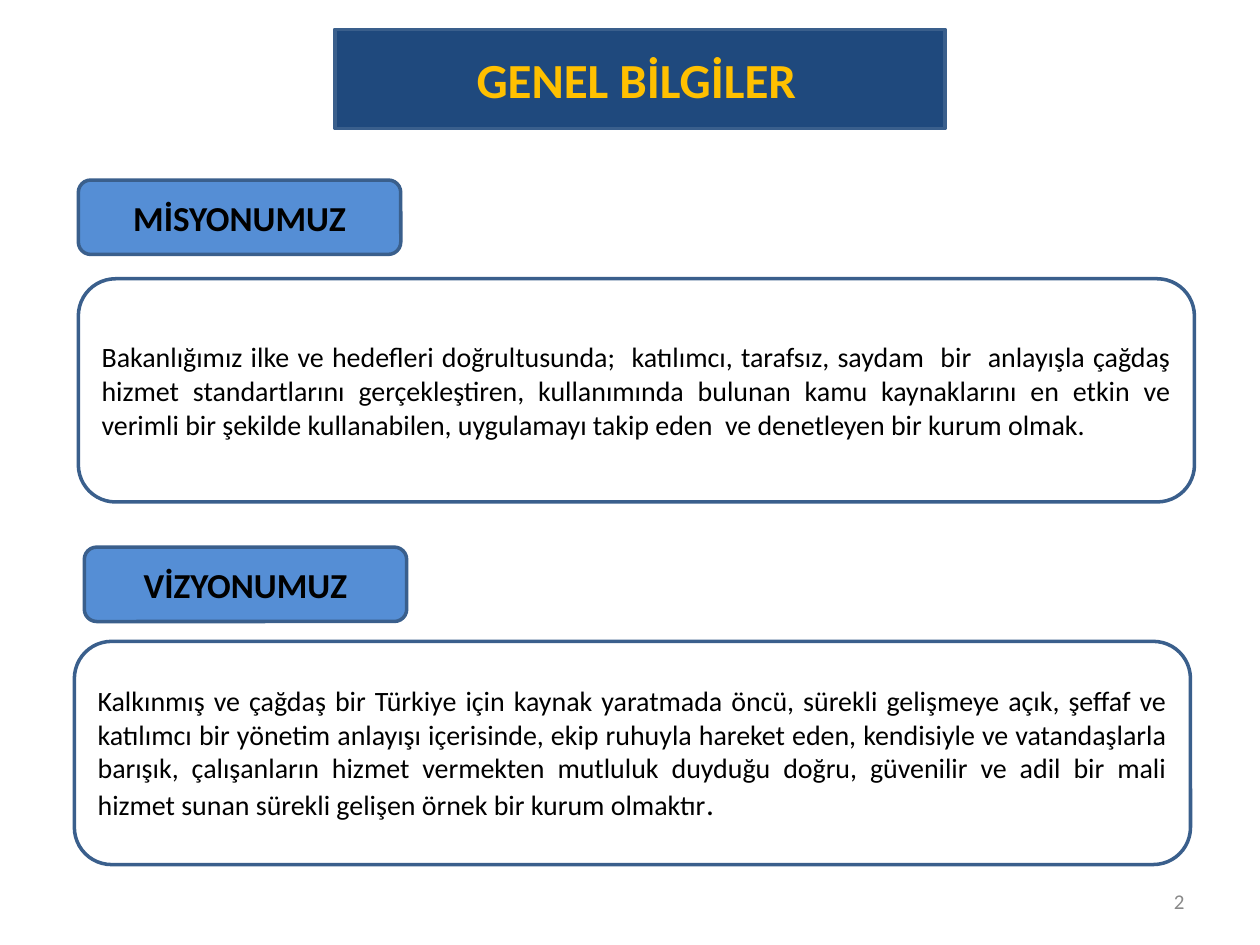
from lxml import etree
from pptx import Presentation
from pptx.dml.color import RGBColor
from pptx.enum.shapes import MSO_SHAPE
from pptx.enum.text import MSO_ANCHOR, MSO_AUTO_SIZE, PP_ALIGN
from pptx.oxml.ns import qn
from pptx.util import Cm, Pt

ROUNDED = MSO_SHAPE.ROUNDED_RECTANGLE
MIDDLE = MSO_ANCHOR.MIDDLE
FIXED = MSO_AUTO_SIZE.NONE
CENTER, JUSTIFY, RIGHT = PP_ALIGN.CENTER, PP_ALIGN.JUSTIFY, PP_ALIGN.RIGHT
TITLE_ONLY = 5

FONT = "Calibri"
BORDER = "3A5F8C"
BLACK = "000000"
HEADING_HEIGHT = 1.5
STATEMENT_HEIGHT = 4.5

MISSION = [
    ("Bakanlığımız ilke ve hedefleri doğrultusunda;  katılımcı, tarafsız, "
     "saydam  bir  anlayışla çağdaş hizmet standartlarını gerçekleştiren, "
     "kullanımında bulunan kamu kaynaklarını en etkin ve verimli bir şekilde "
     "kullanabilen, uygulamayı takip eden  ve denetleyen bir kurum olmak.", 16),
]
VISION = [
    ("Kalkınmış ve çağdaş bir Türkiye için kaynak yaratmada öncü, sürekli "
     "gelişmeye açık, şeffaf ve katılımcı bir yönetim anlayışı içerisinde, "
     "ekip ruhuyla hareket eden, kendisiyle ve vatandaşlarla barışık, "
     "çalışanların hizmet vermekten mutluluk duyduğu doğru, güvenilir ve adil "
     "bir mali hizmet sunan sürekli gelişen örnek bir kurum olmaktır", 16),
    (".", 18),
]


def color(hex_value):
    return RGBColor.from_string(hex_value)


def write(shape, runs, align, text_color, bold=False):
    frame = shape.text_frame
    frame.word_wrap = True
    frame.auto_size = FIXED
    frame.vertical_anchor = MIDDLE
    paragraph = frame.paragraphs[0]
    paragraph.alignment = align
    for text, size in runs:
        run = paragraph.add_run()
        run.text = text
        run.font.name = FONT
        run.font.size = Pt(size)
        run.font.bold = bold
        run.font.color.rgb = color(text_color)


def paint(shape, fill=None):
    if fill:
        shape.fill.solid()
        shape.fill.fore_color.rgb = color(fill)
    else:
        shape.fill.background()
    shape.line.color.rgb = color(BORDER)
    shape.line.width = Pt(2)


def add_panel(slide, left, top, width, height, fill=None):
    panel = slide.shapes.add_shape(
        ROUNDED, Cm(left), Cm(top), Cm(width), Cm(height))
    panel.shadow.inherit = False
    paint(panel, fill)
    return panel


def place_title(slide, left, top, width, height):
    title = slide.shapes.title
    title.left, title.top = Cm(left), Cm(top)
    title.width, title.height = Cm(width), Cm(height)
    properties = title.element.spPr
    geometry = etree.SubElement(properties, qn("a:prstGeom"), prst="roundRect")
    etree.SubElement(geometry, qn("a:avLst"))
    paint(title, "1F497D")
    title.text_frame.margin_right = Cm(0.4)
    write(title, [("GENEL BİLGİLER", 28)], CENTER, "FFC000", bold=True)


def add_section(slide, left, top, width, heading, statement,
                heading_indent, statement_offset):
    label = add_panel(slide, left + heading_indent, top, 6.5, HEADING_HEIGHT,
                      "558ED5")
    write(label, [(heading, 20)], CENTER, BLACK, bold=True)
    body = add_panel(slide, left, top + statement_offset, width,
                     STATEMENT_HEIGHT)
    write(body, statement, JUSTIFY, BLACK)


def add_page_number(slide, left, top, width, height):
    number = slide.shapes.add_textbox(
        Cm(left), Cm(top), Cm(width), Cm(height))
    write(number, [("2", 12)], RIGHT, "898989")


def main():
    presentation = Presentation()
    presentation.slide_width, presentation.slide_height = Cm(25.4), Cm(19.05)
    slide = presentation.slides.add_slide(
        presentation.slide_layouts[TITLE_ONLY])
    place_title(slide, 6.75, 0.59, 12.3, 2)
    add_section(slide, 1.58, 3.63, 22.5, "MİSYONUMUZ", MISSION, 0, 1.99)
    add_section(slide, 1.5, 11.03, 22.5, "VİZYONUMUZ", VISION, 0.2, 1.9)
    add_page_number(slide, 18.2, 17.66, 5.93, 1.01)
    presentation.save("out.pptx")


if __name__ == "__main__":
    main()
